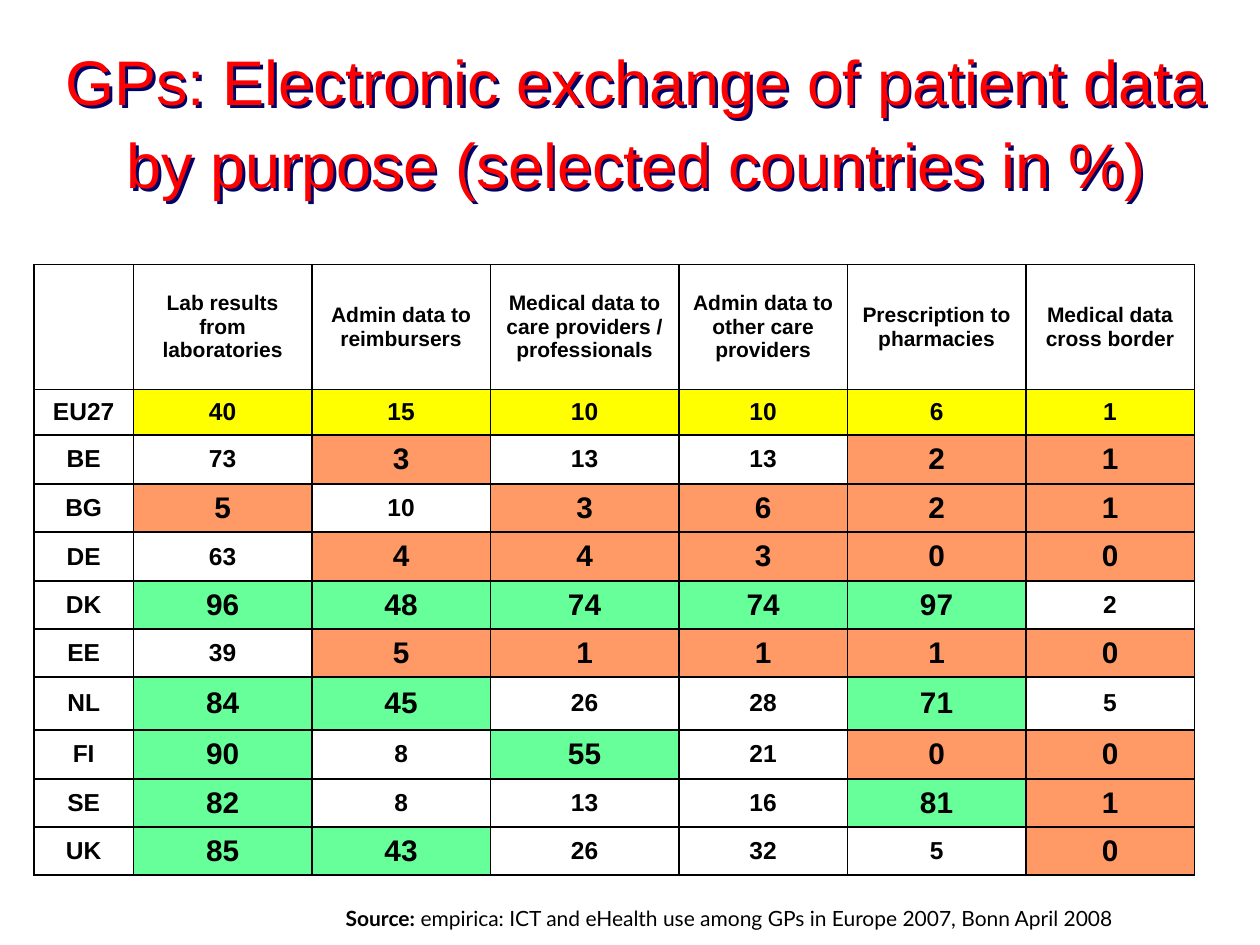
from dataclasses import dataclass

from lxml.etree import SubElement
from pptx import Presentation
from pptx.dml.color import RGBColor as Rgb
from pptx.enum.text import MSO_ANCHOR as Anchor, PP_ALIGN as Align
from pptx.oxml.ns import qn
from pptx.util import Emu, Inches, Pt


@dataclass(frozen=True)
class Theme:
    """Colours, fonts and type sizes of the slide."""
    ink: str = "000000"
    title: str = "FF0000"
    title_shadow: str = "000066"
    average: str = "FFFF00"
    low: str = "FF9966"
    high: str = "66FF99"
    font: str = "Arial"
    source_font: str = "Lato"
    title_size: float = 36
    heading_size: float = 12
    value_size: float = 14
    marked_size: float = 17
    source_size: float = 12


THEME = Theme()
TITLE = "GPs: Electronic exchange of patient data by purpose (selected countries in %)"
SOURCE = ("Source:", " empirica: ICT and eHealth use among GPs in Europe 2007, Bonn April 2008")
PURPOSES = [
    "Lab results from laboratories", "Admin data to reimbursers",
    "Medical data to care providers / professionals",
    "Admin data to other care providers", "Prescription to pharmacies",
    "Medical data cross border",
]
LOW_LIMITS = [5, 5, 4, 6, 2, 1]
HIGH_LIMITS = [82, 43, 55, 74, 71, 100]
AVERAGE = "EU27"
SHARES = {
    AVERAGE: [40, 15, 10, 10, 6, 1],
    "BE": [73, 3, 13, 13, 2, 1],
    "BG": [5, 10, 3, 6, 2, 1],
    "DE": [63, 4, 4, 3, 0, 0],
    "DK": [96, 48, 74, 74, 97, 2],
    "EE": [39, 5, 1, 1, 1, 0],
    "NL": [84, 45, 26, 28, 71, 5],
    "FI": [90, 8, 55, 21, 0, 0],
    "SE": [82, 8, 13, 16, 81, 1],
    "UK": [85, 43, 26, 32, 5, 0],
}
COLUMN_WEIGHTS = [0.79, 1.42, 1.42, 1.5, 1.34, 1.42, 1.34]
ROW_WEIGHTS = [0.99, 0.36, 0.39, 0.38, 0.39, 0.38, 0.38, 0.42, 0.39, 0.38, 0.38]


def style_font(font, name, size, colour, bold=None):
    """Apply a typeface, size, colour and weight."""
    font.name, font.size, font.bold = name, Pt(size), bold
    font.color.rgb = Rgb.from_string(colour)


def share_box(prs, left, top, width, height):
    """Turn shares of the slide's size into a box."""
    return (Emu(int(prs.slide_width * left)), Emu(int(prs.slide_height * top)),
            Emu(int(prs.slide_width * width)), Emu(int(prs.slide_height * height)))


def add_title(slide, box):
    """Fill the title placeholder and give its letters a hard shadow."""
    title = slide.shapes.title
    title.left, title.top, title.width, title.height = box
    frame = title.text_frame
    frame.text, frame.word_wrap, frame.vertical_anchor = TITLE, True, Anchor.MIDDLE
    heading = frame.paragraphs[0]
    heading.alignment, heading.line_spacing, heading.space_before = Align.CENTER, 1.1, Pt(0)
    style_font(heading.font, THEME.font, THEME.title_size, THEME.title)
    effects = SubElement(title.element.spPr, qn("a:effectLst"))
    shadow = SubElement(effects, qn("a:outerShdw"), dist=str(Inches(0.03)), dir="2700000", algn="ctr")
    SubElement(shadow, qn("a:srgbClr"), val=THEME.title_shadow)


def add_borders(cell):
    """Rule all four sides of a cell."""
    properties = cell._tc.get_or_add_tcPr()
    for position, side in enumerate(("lnL", "lnR", "lnT", "lnB")):
        line = SubElement(properties, qn(f"a:{side}"), w=str(Pt(1)))
        properties.insert(position, line)
        SubElement(SubElement(line, qn("a:solidFill")), qn("a:srgbClr"), val=THEME.ink)


def fill_cell(cell, label, size, colour=None, hanging=False):
    """Write one cell with its fill and borders."""
    cell.vertical_anchor = Anchor.MIDDLE
    if colour:
        cell.fill.solid()
        cell.fill.fore_color.rgb = Rgb.from_string(colour)
    else:
        cell.fill.background()
    add_borders(cell)
    cell.text = label
    entry = cell.text_frame.paragraphs[0]
    entry.alignment = Align.CENTER
    if hanging:
        indents = entry._p.get_or_add_pPr()
        indents.set("marL", str(Inches(0.38)))
        indents.set("indent", str(-Inches(0.38)))
    style_font(entry.font, THEME.font, size, THEME.ink, True)


def mark_for(country, share, low, high):
    """Choose the fill and type size that a share deserves."""
    if country == AVERAGE:
        return THEME.average, THEME.value_size
    if share <= low:
        return THEME.low, THEME.marked_size
    if share >= high:
        return THEME.high, THEME.marked_size
    return None, THEME.value_size


def add_share_table(slide, box):
    """Place the table of countries by purpose."""
    width, height = box[2:]
    table = slide.shapes.add_table(len(ROW_WEIGHTS), len(COLUMN_WEIGHTS), *box).table
    table.first_row = table.horz_banding = False
    for column, weight in zip(table.columns, COLUMN_WEIGHTS):
        column.width = Emu(int(width * weight / sum(COLUMN_WEIGHTS)))
    for row, weight in zip(table.rows, ROW_WEIGHTS):
        row.height = Emu(int(height * weight / sum(ROW_WEIGHTS)))
    for column, purpose in enumerate(["", *PURPOSES]):
        fill_cell(table.cell(0, column), purpose, THEME.heading_size)
    for row, (country, shares) in enumerate(SHARES.items(), 1):
        fill_cell(table.cell(row, 0), country, THEME.value_size, hanging=country != AVERAGE)
        for column, (share, low, high) in enumerate(zip(shares, LOW_LIMITS, HIGH_LIMITS), 1):
            colour, size = mark_for(country, share, low, high)
            fill_cell(table.cell(row, column), str(share), size, colour, True)


def add_source(slide, box):
    """Place the source line under the table."""
    frame = slide.shapes.add_textbox(*box).text_frame
    frame.word_wrap = False
    credit = frame.paragraphs[0]
    credit.alignment = Align.CENTER
    style_font(credit.font, THEME.source_font, THEME.source_size, THEME.ink)
    for wording, bold in zip(SOURCE, (True, False)):
        run = credit.add_run()
        run.text, run.font.bold = wording, bold


def main():
    """Build and save the slide."""
    prs = Presentation()
    prs.slide_width, prs.slide_height = Inches(10), Inches(7.5)
    slide = prs.slides.add_slide(prs.slide_layouts[5])
    add_title(slide, share_box(prs, 0.02, 0.02, 0.97, 0.21))
    add_share_table(slide, share_box(prs, 0.027, 0.28, 0.921, 0.646))
    add_source(slide, share_box(prs, 0.256, 0.952, 0.646, 0.04))
    prs.save("out.pptx")


if __name__ == "__main__":
    main()
